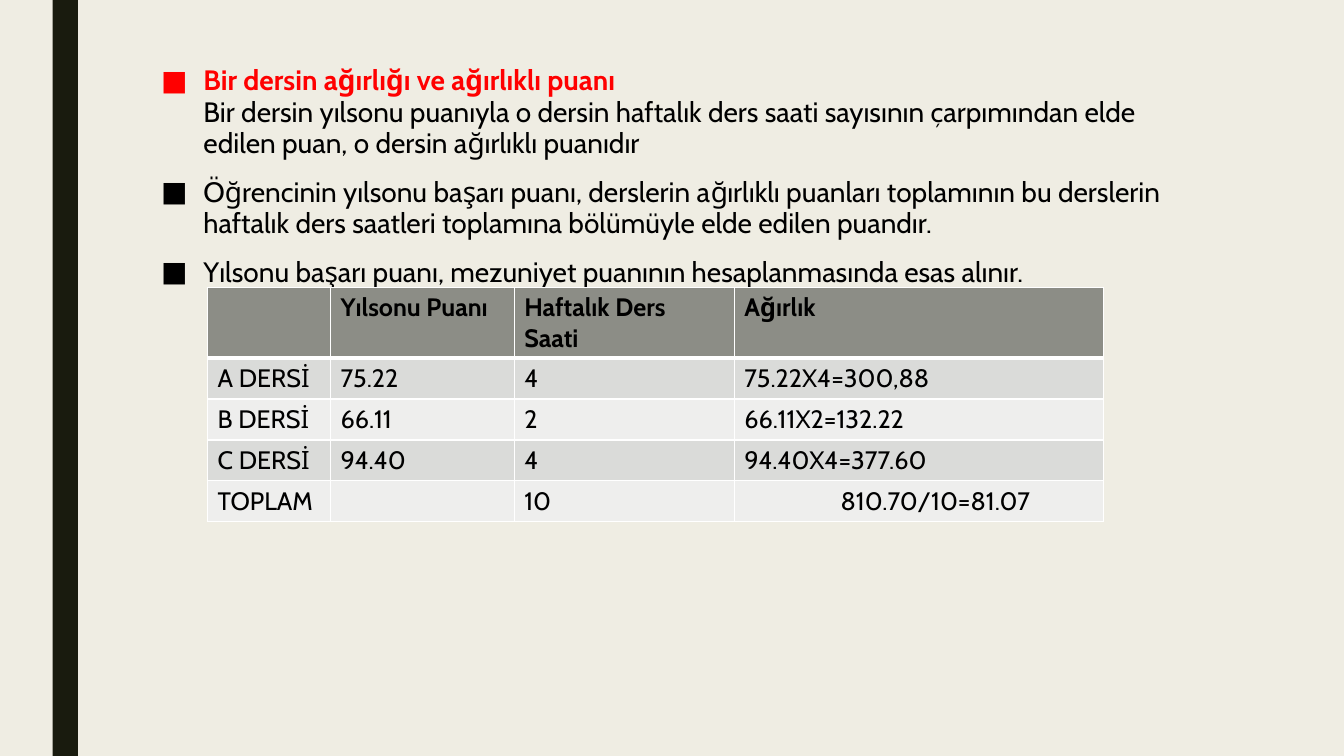
import pptx
import pptx.util
import pptx.dml.color
import pptx.enum.shapes
import pptx.oxml
import pptx.oxml.ns
from lxml import etree

Pt = pptx.util.Pt
qn = pptx.oxml.ns.qn

FONT = "Cabin"
BLACK = "000000"
RED = "FF0000"
WHITE = "FFFFFF"

RULES = [
    [
        ("Bir dersin ağırlığı ve ağırlıklı puanı", RED, True),
        ("Bir dersin yılsonu puanıyla o dersin haftalık ders saati sayısının "
         "çarpımından elde edilen puan, o dersin ağırlıklı puanıdır", BLACK, False),
    ],
    [("Öğrencinin yılsonu başarı puanı, derslerin ağırlıklı puanları toplamının "
      "bu derslerin haftalık ders saatleri toplamına bölümüyle elde edilen puandır.",
      BLACK, False)],
    [("Yılsonu başarı puanı, mezuniyet puanının hesaplanmasında esas alınır.",
      BLACK, False)],
]

GRADES = [
    ["", "Yılsonu Puanı", "Haftalık Ders Saati", "Ağırlık"],
    ["A DERSİ", "75.22", "4", "75.22X4=300,88"],
    ["B DERSİ", "66.11", "2", "66.11X2=132.22"],
    ["C DERSİ", "94.40", "4", "94.40X4=377.60"],
    ["TOPLAM", "", "10", "810.70/10=81.07"],
]
COLUMN_WIDTHS = [87.8, 131.2, 157.2, 263.9]
HEADER_HEIGHT = 50.4
ROW_HEIGHT = 29.2


def rgb(value):
    return pptx.dml.color.RGBColor.from_string(value)


def paint(target, color):
    target.fill.solid()
    target.fill.fore_color.rgb = rgb(color)


def add_run(paragraph, text, size, color=BLACK, bold=False):
    run = paragraph.add_run()
    run.text = text
    run.font.name = FONT
    run.font.size = Pt(size)
    run.font.bold = bold
    run.font.color.rgb = rgb(color)


def add_side_bar(slide):
    bar = slide.shapes.add_shape(
        pptx.enum.shapes.MSO_SHAPE.RECTANGLE, Pt(37.6), Pt(0), Pt(18), Pt(540))
    bar.shadow.inherit = False
    paint(bar, "191B0E")
    bar.line.fill.background()


def set_bullet(paragraph, color):
    properties = paragraph._p.get_or_add_pPr()
    properties.set("marL", str(Pt(30.24)))
    properties.set("indent", str(-Pt(30.24)))
    bullet_color = etree.SubElement(properties, qn("a:buClr"))
    etree.SubElement(bullet_color, qn("a:srgbClr"), val=color)
    etree.SubElement(properties, qn("a:buFont"), typeface=FONT)
    etree.SubElement(properties, qn("a:buChar"), char="■")


def add_rules(slide):
    body = slide.shapes.add_textbox(Pt(108), Pt(43.2), Pt(756), Pt(419)).text_frame
    body.word_wrap = True
    for index, rule in enumerate(RULES):
        paragraph = body.add_paragraph() if index else body.paragraphs[0]
        paragraph.line_spacing = 0.94
        paragraph.space_before = Pt(10)
        paragraph.space_after = Pt(2)
        set_bullet(paragraph, rule[0][1])
        for part, (text, color, bold) in enumerate(rule):
            if part:
                paragraph.add_line_break()
            add_run(paragraph, text, 20, color, bold)


def set_borders(cell, widths):
    properties = cell._tc.get_or_add_tcPr()
    for side, width in widths.items():
        border = etree.SubElement(properties, qn("a:ln" + side), w=str(Pt(width)))
        fill = etree.SubElement(border, qn("a:solidFill"))
        etree.SubElement(fill, qn("a:srgbClr"), val=WHITE)


def row_fill(row):
    if row == 0:
        return "8C8D86"
    return "DADBD9" if row % 2 else "EEEEED"


def add_grades(slide):
    height = HEADER_HEIGHT + ROW_HEIGHT * (len(GRADES) - 1)
    grades = slide.shapes.add_table(
        len(GRADES), len(COLUMN_WIDTHS), Pt(148.3), Pt(205.4),
        Pt(sum(COLUMN_WIDTHS)), Pt(height)).table
    for column, width in zip(grades.columns, COLUMN_WIDTHS):
        column.width = Pt(width)
    for row, texts in enumerate(GRADES):
        grades.rows[row].height = Pt(ROW_HEIGHT if row else HEADER_HEIGHT)
        for column, text in enumerate(texts):
            cell = grades.cell(row, column)
            set_borders(cell, {"L": 1, "R": 1, "T": 3 if row == 1 else 1,
                               "B": 1 if row else 3})
            paint(cell, row_fill(row))
            if text:
                add_run(cell.text_frame.paragraphs[0], text, 18, bold=row == 0)
    average = grades.cell(len(GRADES) - 1, len(COLUMN_WIDTHS) - 1)
    average.margin_left = Pt(76)


def main():
    deck = pptx.Presentation()
    deck.slide_width = Pt(960)
    deck.slide_height = Pt(540)
    slide = deck.slides.add_slide(deck.slide_layouts[6])
    paint(slide.background, "EFEDE3")
    add_side_bar(slide)
    add_rules(slide)
    add_grades(slide)
    deck.save("out.pptx")


if __name__ == "__main__":
    main()
